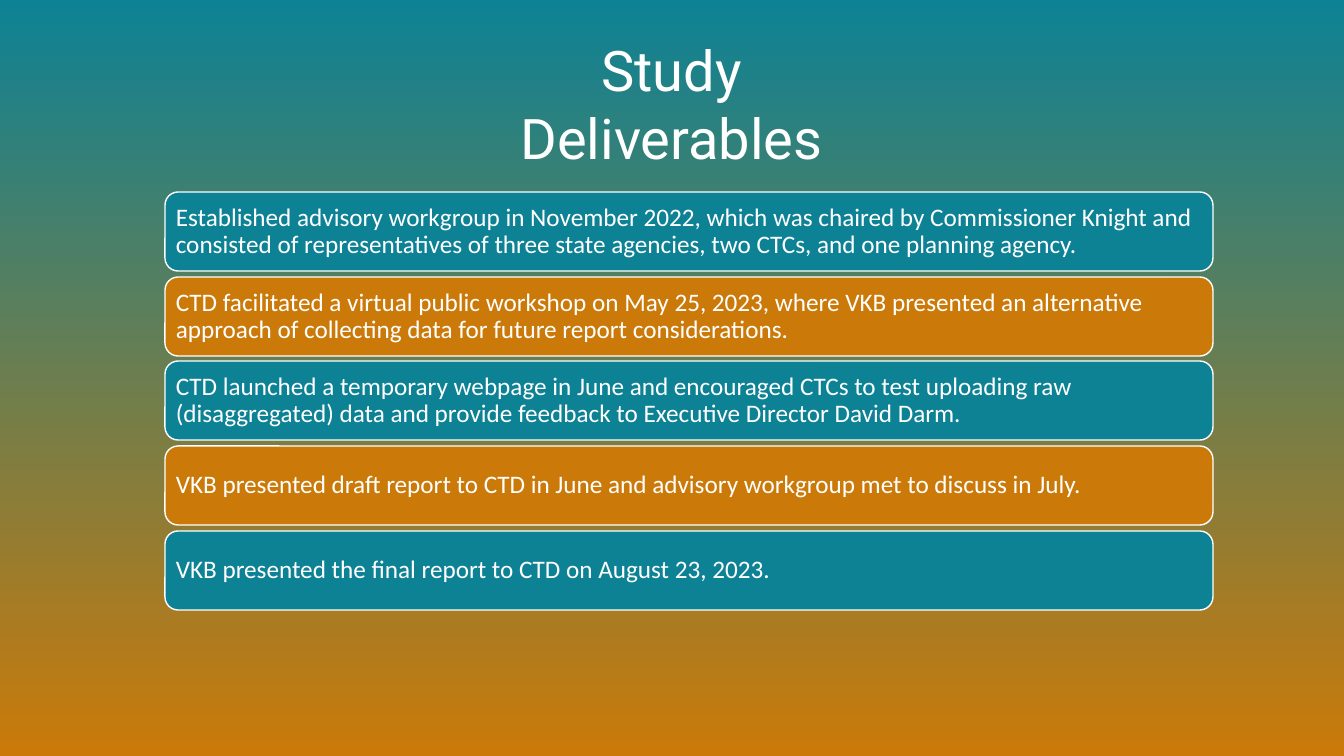
import pptx
import pptx.dml.color
import pptx.enum.shapes
import pptx.enum.text
import pptx.util

PX = 914400 / 100.8
TEAL, ORANGE, WHITE = "0D8295", "CB7A09", "FFFFFF"
DELIVERABLES = [
    "Established advisory workgroup in November 2022, which was chaired by Commissioner Knight and consisted of representatives of three state agencies, two CTCs, and one planning agency.",
    "CTD facilitated a virtual public workshop on May 25, 2023, where VKB presented an alternative approach of collecting data for future report considerations.",
    "CTD launched a temporary webpage in June and encouraged CTCs to test uploading raw (disaggregated) data and provide feedback to Executive Director David Darm.",
    "VKB presented draft report to CTD in June and advisory workgroup met to discuss in July.",
    "VKB presented the final report to CTD on August 23, 2023.",
]


def rgb(value):
    return pptx.dml.color.RGBColor.from_string(value)


def set_text(sp, text, font, size, align, anchor, inset, spacing):
    """Fill a shape with one white paragraph; inset is (horizontal, vertical) px."""
    tf = sp.text_frame
    tf.word_wrap = True
    tf.auto_size = pptx.enum.text.MSO_AUTO_SIZE.NONE
    tf.vertical_anchor = anchor
    tf.margin_left = tf.margin_right = round(inset[0] * PX)
    tf.margin_top = tf.margin_bottom = round(inset[1] * PX)
    p = tf.paragraphs[0]
    p.alignment = align
    p.line_spacing = spacing
    r = p.add_run()
    r.text = text
    r.font.name = font
    r.font.size = pptx.util.Pt(size)
    r.font.color.rgb = rgb(WHITE)


ALIGN = pptx.enum.text.PP_ALIGN
ANCHOR = pptx.enum.text.MSO_ANCHOR

prs = pptx.Presentation()
prs.slide_width = round(1344 * PX)
prs.slide_height = round(756 * PX)
s = prs.slides.add_slide(prs.slide_layouts[5])

fill = s.background.fill
fill.gradient()
fill.gradient_angle = 270
for stop, color in zip(fill.gradient_stops, (TEAL, ORANGE)):
    stop.color.rgb = rgb(color)

title = s.shapes.title
title.left, title.top, title.width, title.height = (
    round(v * PX) for v in (436, 31, 471, 78))
set_text(title, "Study Deliverables", font="Roboto", size=40, align=ALIGN.CENTER,
         anchor=ANCHOR.TOP, inset=(20, 5), spacing=1.0)

for i, text in enumerate(DELIVERABLES):
    top = 192 + round(i * 84.7)
    sp = s.shapes.add_shape(pptx.enum.shapes.MSO_SHAPE.ROUNDED_RECTANGLE,
                            *(round(v * PX) for v in (165, top, 1048, 79)))
    sp.shadow.inherit = False
    sp.fill.solid()
    sp.fill.fore_color.rgb = rgb((TEAL, ORANGE)[i % 2])
    sp.line.color.rgb = rgb(WHITE)
    sp.line.width = pptx.util.Pt(1)
    set_text(sp, text, font="Calibri", size=18, align=ALIGN.LEFT,
             anchor=ANCHOR.MIDDLE, inset=(7, 7), spacing=0.9)

prs.save("out.pptx")
